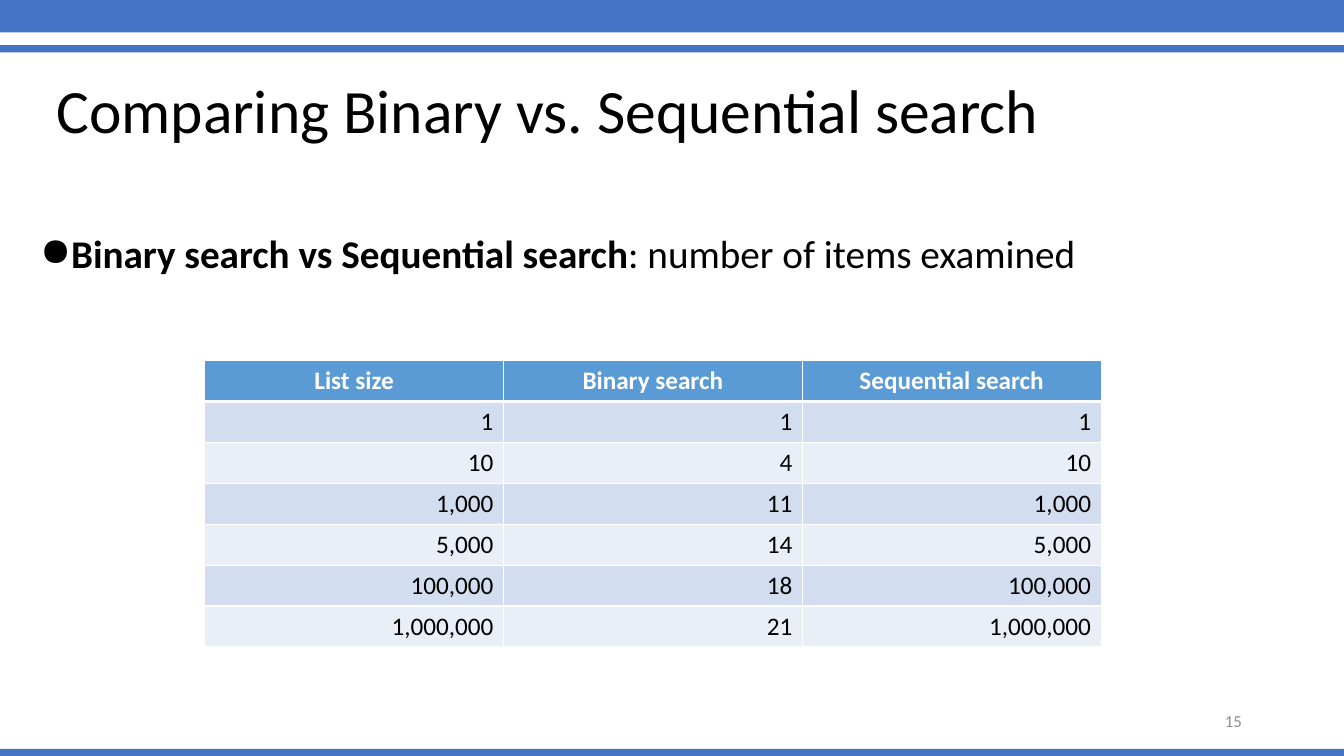
import pptx
import pptx.dml.color
import pptx.enum.shapes
import pptx.enum.text
import pptx.oxml
import pptx.oxml.ns
import pptx.util
from lxml import etree

Cm, Pt = pptx.util.Cm, pptx.util.Pt
ALIGN = pptx.enum.text.PP_ALIGN
ANCHOR = pptx.enum.text.MSO_ANCHOR

SLIDE_SIZE = (33.87, 19.05)
BARS = [(-0.15, 0.97), (1.14, 0.18), (18.87, 0.18)]
BAR_COLOR = "4472C4"

TEXTS = [
    {"box": (1.17, 1.02, 29.21, 3.68),
     "runs": [("Comparing Binary vs. Sequential search", False)],
     "size": 44, "color": "000000",
     "frame": {"vertical_anchor": ANCHOR.MIDDLE},
     "paragraph": {"line_spacing": 0.9}},
    {"box": (0.76, 4.7, 32.36, 13.59),
     "runs": [("Binary search vs Sequential search", True),
              (": number of items examined", False)],
     "size": 28, "color": "000000", "bullet": "●",
     "frame": {"vertical_anchor": ANCHOR.TOP, "margin_top": Cm(1.22)},
     "paragraph": {"line_spacing": 0.9}},
    {"box": (23.93, 17.65, 7.62, 1.02),
     "runs": [("15", False)],
     "size": 12, "color": "8C8C8C",
     "frame": {"vertical_anchor": ANCHOR.MIDDLE},
     "paragraph": {"alignment": ALIGN.RIGHT}},
]

HEADERS = ("List size", "Binary search", "Sequential search")
ROWS = [
    ("1", "1", "1"),
    ("10", "4", "10"),
    ("1,000", "11", "1,000"),
    ("5,000", "14", "5,000"),
    ("100,000", "18", "100,000"),
    ("1,000,000", "21", "1,000,000"),
]
TABLE_LEFT, TABLE_TOP = 5.16, 9.09
COLUMN_WIDTH, ROW_HEIGHT = 7.53, 1.03
HEADER_FILL, BAND_FILLS = "5B9BD5", ("D2DEEF", "EAEFF7")
BORDER_COLOR = "FFFFFF"
BULLET_INDENT = 0.64


def rgb(color):
    return pptx.dml.color.RGBColor.from_string(color)


def set_attributes(target, values):
    for name, value in values.items():
        setattr(target, name, value)


def fill_solid(target, color):
    target.fill.solid()
    target.fill.fore_color.rgb = rgb(color)


def add_run(paragraph, text, size, color, bold):
    run = paragraph.add_run()
    run.text = text
    set_attributes(run.font, {"name": "Calibri", "size": Pt(size), "bold": bold})
    run.font.color.rgb = rgb(color)


def add_bullet(paragraph, character):
    properties = paragraph._p.get_or_add_pPr()
    properties.set("marL", str(Cm(BULLET_INDENT)))
    properties.set("indent", str(-Cm(BULLET_INDENT)))
    bullet = etree.SubElement(properties, pptx.oxml.ns.qn("a:buChar"))
    bullet.set("char", character)


def add_bar(slide, top, height):
    shape = slide.shapes.add_shape(
        pptx.enum.shapes.MSO_SHAPE.RECTANGLE,
        Cm(0), Cm(top), Cm(SLIDE_SIZE[0]), Cm(height))
    shape.shadow.inherit = False
    fill_solid(shape, BAR_COLOR)
    shape.line.fill.background()


def add_text(slide, item):
    frame = slide.shapes.add_textbox(*map(Cm, item["box"])).text_frame
    frame.word_wrap = True
    set_attributes(frame, item["frame"])
    paragraph = frame.paragraphs[0]
    set_attributes(paragraph, item["paragraph"])
    if "bullet" in item:
        add_bullet(paragraph, item["bullet"])
    for text, bold in item["runs"]:
        add_run(paragraph, text, item["size"], item["color"], bold)


def set_borders(cell, widths):
    properties = cell._tc.get_or_add_tcPr()
    for position, (side, width) in enumerate(widths.items()):
        properties.insert(position, pptx.oxml.parse_xml(
            f'<a:{side} {pptx.oxml.ns.nsdecls("a")} w="{Pt(width)}"><a:solidFill>'
            f'<a:srgbClr val="{BORDER_COLOR}"/></a:solidFill></a:{side}>'))


def add_search_table(slide):
    rows = [HEADERS, *ROWS]
    table = slide.shapes.add_table(
        len(rows), len(HEADERS), Cm(TABLE_LEFT), Cm(TABLE_TOP),
        Cm(COLUMN_WIDTH * len(HEADERS)), Cm(ROW_HEIGHT * len(rows))).table
    for column in table.columns:
        column.width = Cm(COLUMN_WIDTH)
    for row_index, values in enumerate(rows):
        table.rows[row_index].height = Cm(ROW_HEIGHT)
        header = row_index == 0
        fill = HEADER_FILL if header else BAND_FILLS[(row_index - 1) % 2]
        borders = {"lnL": 1, "lnR": 1, "lnT": 3 if row_index == 1 else 1,
                   "lnB": 3 if header else 1}
        for column_index, text in enumerate(values):
            cell = table.cell(row_index, column_index)
            fill_solid(cell, fill)
            set_borders(cell, borders)
            paragraph = cell.text_frame.paragraphs[0]
            paragraph.alignment = ALIGN.CENTER if header else ALIGN.RIGHT
            add_run(paragraph, text, 18, "FFFFFF" if header else "000000", header)


def main():
    """Build the slide comparing binary and sequential search."""
    presentation = pptx.Presentation()
    presentation.slide_width, presentation.slide_height = map(Cm, SLIDE_SIZE)
    slide = presentation.slides.add_slide(presentation.slide_layouts[6])
    for top, height in BARS:
        add_bar(slide, top, height)
    for item in TEXTS:
        add_text(slide, item)
    add_search_table(slide)
    presentation.save("out.pptx")


if __name__ == "__main__":
    main()
